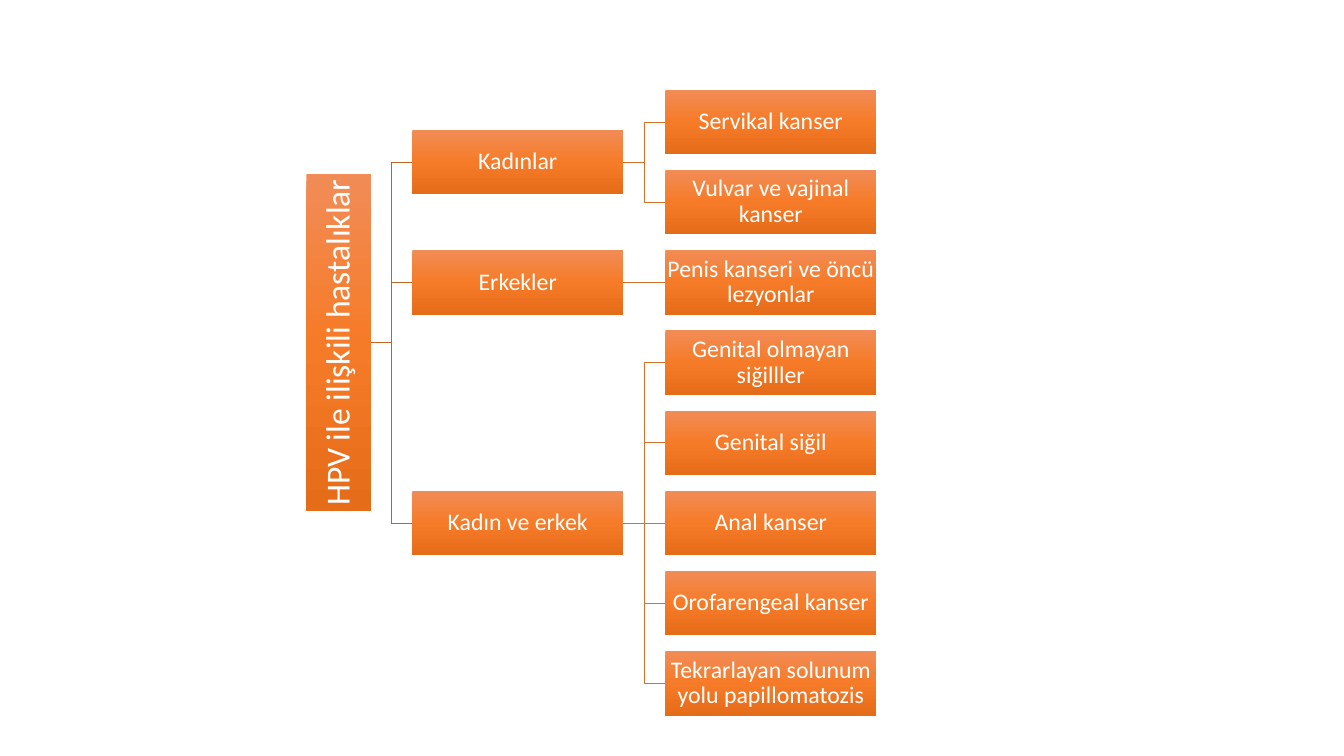
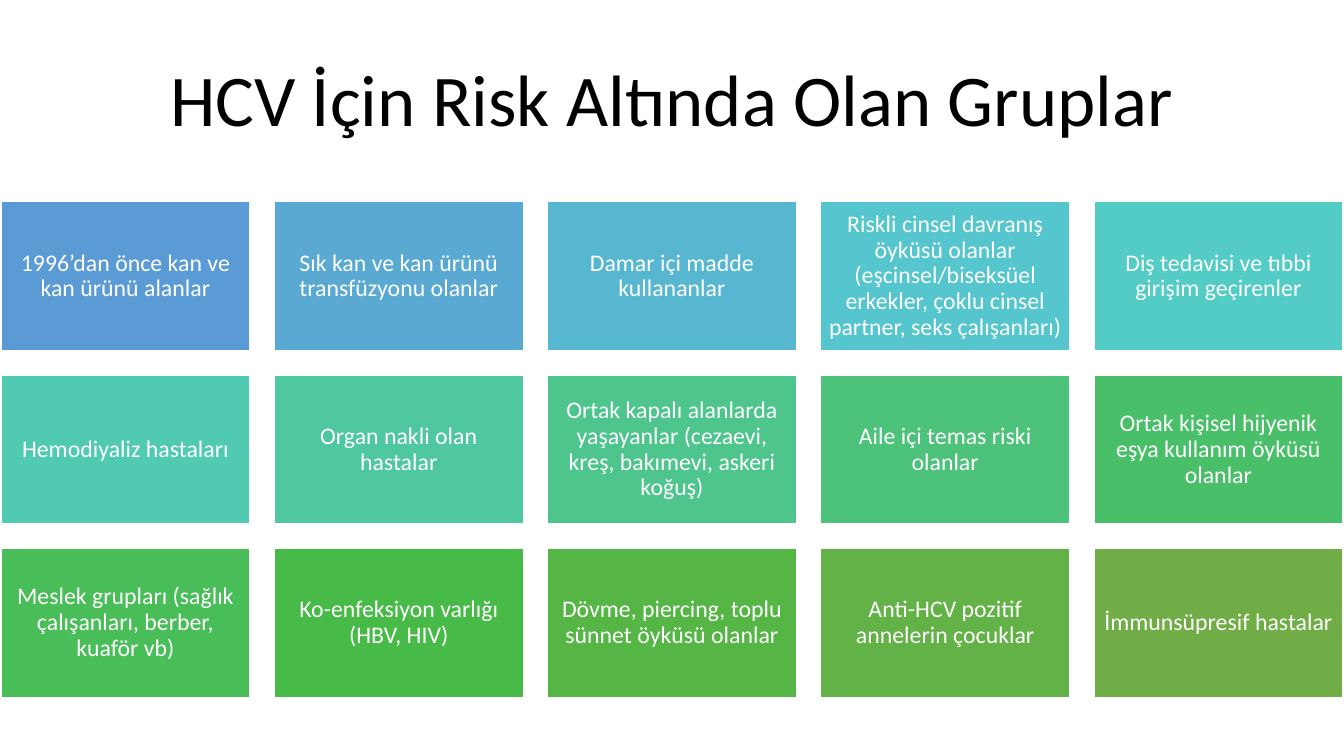
from dataclasses import dataclass
from itertools import product

import pptx
import pptx.dml.color
import pptx.enum.shapes
import pptx.enum.text
import pptx.oxml
import pptx.oxml.ns
import pptx.util
from pptx.util import Inches

# Shared look
FONT = "Calibri"
WHITE = "FFFFFF"
BLACK = "000000"
ORANGE_STOPS = [(0, "F18C57"), (50, "F67B28"), (100, "E56C19")]
ROOT_LINE = "BE6427"
BRANCH_LINE = "D7712C"
LABEL_SIZE = 17

# Disease tree: sizes in inches
NODE_WIDTH, NODE_HEIGHT = 2.09, 0.64
ROOT_LEFT, ROOT_HEIGHT = 3.04, 3.35
GROUP_LEFT, LEAF_LEFT = 4.09, 6.6
FIRST_LEAF, LAST_LEAF = 1.21, 6.78  # vertical centres
ROOT_TEXT = "HPV ile ilişkili hastalıklar"
DISEASES = {
    "Kadınlar": ["Servikal kanser", "Vulvar ve vajinal kanser"],
    "Erkekler": ["Penis kanseri ve öncü lezyonlar"],
    "Kadın ve erkek": [
        "Genital olmayan siğilller",
        "Genital siğil",
        "Anal kanser",
        "Orofarengeal kanser",
        "Tekrarlayan solunum yolu papillomatozis",
    ],
}

# Risk grid: sizes in inches
COLUMNS, ROWS = 5, 3
GRID_LEFT, GRID_TOP = 0.01, 2.0
COLUMN_STEP, ROW_STEP = 2.71, 1.72
CARD_WIDTH, CARD_HEIGHT = 2.47, 1.48
RISK_TITLE = "HCV İçin Risk Altında Olan Gruplar"
RISK_GROUPS = [
    ("1996’dan önce kan ve kan ürünü alanlar", "5B9BD5"),
    ("Sık kan ve kan ürünü transfüzyonu olanlar", "59A9D3"),
    ("Damar içi madde kullananlar", "57B7D1"),
    ("Riskli cinsel davranış öyküsü olanlar (eşcinsel/biseksüel erkekler, "
     "çoklu cinsel partner, seks çalışanları)", "55C5CE"),
    ("Diş tedavisi ve tıbbi girişim geçirenler", "53CCC5"),
    ("Hemodiyaliz hastaları", "51CAB2"),
    ("Organ nakli olan hastalar", "4FC7A0"),
    ("Ortak kapalı alanlarda yaşayanlar (cezaevi, kreş, bakımevi, "
     "askeri koğuş)", "4DC58D"),
    ("Aile içi temas riski olanlar", "4CC27B"),
    ("Ortak kişisel hijyenik eşya kullanım öyküsü olanlar", "4ABF6A"),
    ("Meslek grupları (sağlık çalışanları, berber, kuaför vb)", "48BD58"),
    ("Ko-enfeksiyon varlığı (HBV, HIV)", "47BA47"),
    ("Dövme, piercing, toplu sünnet öyküsü olanlar", "55B646"),
    ("Anti-HCV pozitif annelerin çocuklar", "63B247"),
    ("İmmunsüpresif hastalar", "70AD47"),
]


@dataclass
class Card:
    """A rectangle with a centred label; lengths in inches."""
    text: str
    left: float
    top: float
    width: float
    height: float
    inset: float = 0.01
    size: float = LABEL_SIZE
    fill: str = ""  # empty means the orange gradient
    upright: bool = False


def color(code: str) -> pptx.dml.color.RGBColor:
    return pptx.dml.color.RGBColor.from_string(code)


def apply(target, values: dict) -> None:
    for name, value in values.items():
        setattr(target, name, value)


def write(box, text: str, size: float, code: str,
          inset_x: float, inset_y: float) -> None:
    """Put one centred paragraph in the middle of a box."""
    frame = box.text_frame
    apply(frame, {
        "word_wrap": True,
        "vertical_anchor": pptx.enum.text.MSO_ANCHOR.MIDDLE,
        "margin_left": Inches(inset_x), "margin_right": Inches(inset_x),
        "margin_top": Inches(inset_y), "margin_bottom": Inches(inset_y),
    })
    para = frame.paragraphs[0]
    apply(para, {"alignment": pptx.enum.text.PP_ALIGN.CENTER,
                 "line_spacing": 0.9})
    span = para.add_run()
    span.text = text
    apply(span.font, {"name": FONT, "size": pptx.util.Pt(size)})
    span.font.color.rgb = color(code)


def fill_orange(box) -> None:
    """Fill with the three-stop gradient, light at the top."""
    box.fill.gradient()
    box.fill.gradient_angle = 270
    stops = next(box._element.spPr.iter(pptx.oxml.ns.qn("a:gsLst")))
    for old in list(stops):
        stops.remove(old)
    for position, code in ORANGE_STOPS:
        stops.append(pptx.oxml.parse_xml(
            f'<a:gs {pptx.oxml.ns.nsdecls("a")} pos="{position * 1000}">'
            f'<a:srgbClr val="{code}"/></a:gs>'))


def draw_card(page, card: Card):
    box = page.shapes.add_shape(
        pptx.enum.shapes.MSO_SHAPE.RECTANGLE, Inches(card.left),
        Inches(card.top), Inches(card.width), Inches(card.height))
    box.shadow.inherit = False
    if card.fill:
        box.fill.solid()
        box.fill.fore_color.rgb = color(card.fill)
        box.line.color.rgb = color(WHITE)
        box.line.width = pptx.util.Pt(1)
    else:
        fill_orange(box)
        box.line.fill.background()
    write(box, card.text, card.size, WHITE, card.inset, card.inset)
    if card.upright:
        box.text_frame._txBody.bodyPr.set("vert", "vert270")
    return box


def join(page, parent, child, code: str) -> None:
    """Link a parent's right side to a child's left side."""
    level = abs(parent.top + parent.height / 2
                - child.top - child.height / 2) < Inches(0.02)
    kinds = pptx.enum.shapes.MSO_CONNECTOR
    link = page.shapes.add_connector(
        kinds.STRAIGHT if level else kinds.ELBOW, 0, 0, 0, 0)
    link.begin_connect(parent, 3)
    link.end_connect(child, 1)
    link.line.color.rgb = color(code)
    link.line.width = pptx.util.Pt(0.5)
    link._element.spPr.append(pptx.oxml.parse_xml(
        f'<a:effectLst {pptx.oxml.ns.nsdecls("a")}/>'))


def draw_node(page, text: str, left: float, center: float):
    return draw_card(page, Card(text, left, center - NODE_HEIGHT / 2,
                                NODE_WIDTH, NODE_HEIGHT))


def build_tree(page) -> None:
    leaf_count = sum(len(leaves) for leaves in DISEASES.values())
    step = (LAST_LEAF - FIRST_LEAF) / (leaf_count - 1)

    # Each group sits midway along its leaves
    groups, group_centers, used = [], [], 0
    for name, leaves in DISEASES.items():
        centers = [FIRST_LEAF + step * (used + index)
                   for index in range(len(leaves))]
        used += len(leaves)
        group_centers.append((centers[0] + centers[-1]) / 2)
        group = draw_node(page, name, GROUP_LEFT, group_centers[-1])
        groups.append(group)
        for text, center in zip(leaves, centers):
            join(page, group, draw_node(page, text, LEAF_LEFT, center),
                 BRANCH_LINE)

    # The root sits midway along the groups
    root_center = (group_centers[0] + group_centers[-1]) / 2
    root = draw_card(page, Card(
        ROOT_TEXT, ROOT_LEFT, root_center - ROOT_HEIGHT / 2, NODE_HEIGHT,
        ROOT_HEIGHT, inset=0.02, size=24, upright=True))
    for group in groups:
        join(page, root, group, ROOT_LINE)


def build_risk_grid(page) -> None:
    title = page.shapes.add_textbox(Inches(0.91), Inches(0.4),
                                    Inches(11.5), Inches(1.24))
    write(title, RISK_TITLE, 52, BLACK, 0.1, 0.05)
    cells = product(range(ROWS), range(COLUMNS))
    for (row, column), (text, fill) in zip(cells, RISK_GROUPS):
        draw_card(page, Card(
            text, GRID_LEFT + column * COLUMN_STEP,
            GRID_TOP + row * ROW_STEP, CARD_WIDTH, CARD_HEIGHT,
            inset=0.07, fill=fill))


def main() -> None:
    deck = pptx.Presentation()
    apply(deck, {"slide_width": Inches(13.33), "slide_height": Inches(7.5)})
    for build in (build_tree, build_risk_grid):
        build(deck.slides.add_slide(deck.slide_layouts[6]))
    deck.save("out.pptx")


if __name__ == "__main__":
    main()
